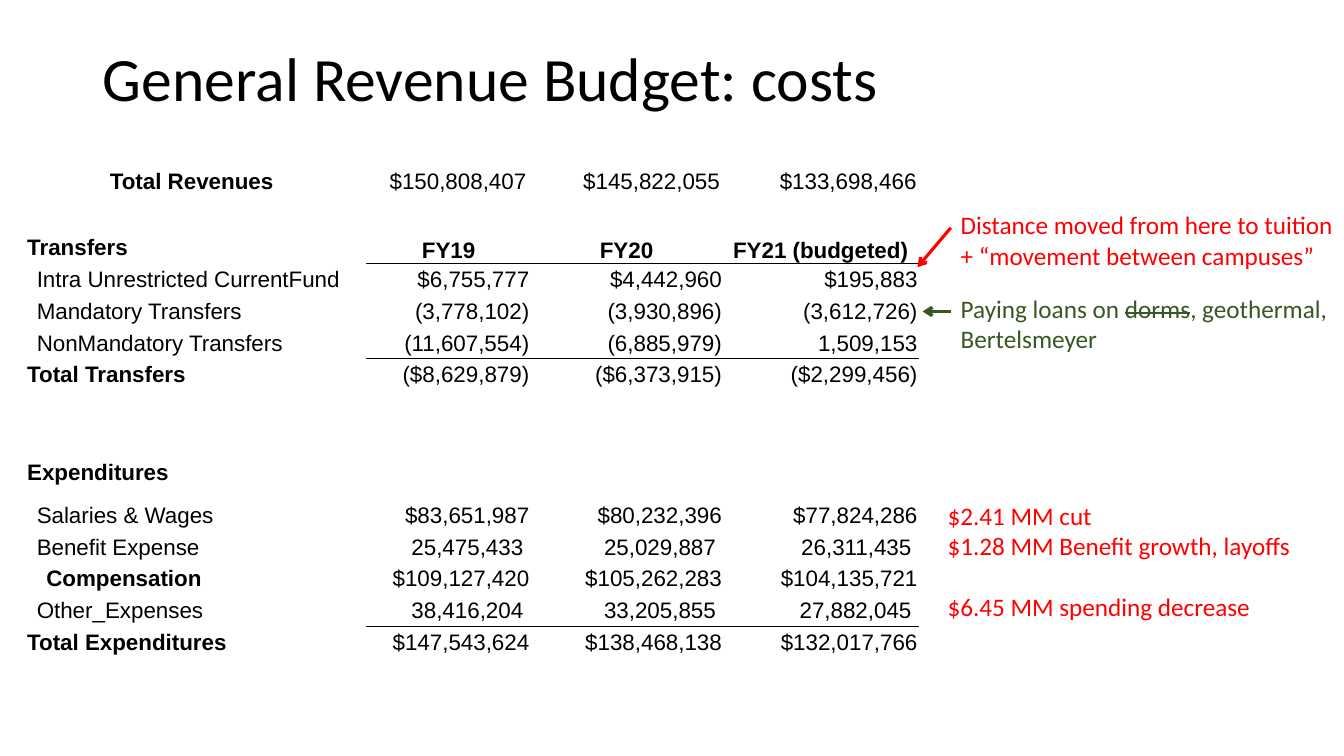
from lxml.etree import SubElement
from pptx import Presentation
from pptx.dml.color import RGBColor
from pptx.enum.shapes import MSO_CONNECTOR
from pptx.enum.text import MSO_ANCHOR, PP_ALIGN
from pptx.oxml.ns import qn
from pptx.util import Inches, Pt

# Content
TITLE = "General Revenue Budget: costs"
BLACK, WHITE, RED, GREEN = "000000", "FFFFFF", "FF0000", "385723"

# Rows: label, label indent level, bold label, values
REVENUES = [("Total Revenues", 0, True, ("$150,808,407", "$145,822,055", "$133,698,466"))]
NO_VALUES = ("", "", "")
COSTS = [
    ("Transfers", 0, True, ("FY19", "FY20", "FY21 (budgeted)")),
    ("Intra Unrestricted CurrentFund", 1, False, ("$6,755,777", "$4,442,960", "$195,883")),
    ("Mandatory Transfers", 1, False, ("(3,778,102)", "(3,930,896)", "(3,612,726)")),
    ("NonMandatory Transfers", 1, False, ("(11,607,554)", "(6,885,979)", "1,509,153")),
    ("Total Transfers", 0, True, ("($8,629,879)", "($6,373,915)", "($2,299,456)")),
    ("", 0, False, NO_VALUES),
    ("Expenditures", 0, True, NO_VALUES),
    ("Salaries & Wages", 1, False, ("$83,651,987", "$80,232,396", "$77,824,286")),
    ("Benefit Expense", 1, False, ("25,475,433", "25,029,887", "26,311,435")),
    ("Compensation", 2, True, ("$109,127,420", "$105,262,283", "$104,135,721")),
    ("Other_Expenses", 1, False, ("38,416,204", "33,205,855", "27,882,045")),
    ("Total Expenditures", 0, True, ("$147,543,624", "$138,468,138", "$132,017,766")),
    ("", 0, False, NO_VALUES),
    ("", 0, False, NO_VALUES),
]
HEADER_ROW = 0
RULED_ROWS = {0, 3, 10}    # a line runs under the values
INSET_ROWS = {8, 10}       # values stand slightly left of the others
TALL_ROWS = {5, 6}
COST_HEIGHTS = [0.54 if row in TALL_ROWS else 0.315 for row in range(len(COSTS))]

# Notes: left, top, width, height, colour, paragraphs of (text, struck out)
NOTES = [
    (9.43, 2.03, 3.9, 0.71, RED,
     [[("Distance moved from here to tuition + “movement between campuses”", False)]]),
    (9.43, 2.86, 4.12, 0.71, GREEN,
     [[("Paying loans on ", False), ("dorms", True), (", geothermal, Bertelsmeyer", False)]]),
    (9.3, 4.91, 3.64, 1.31, RED,
     [[("$2.41 MM cut", False)], [("$1.28 MM Benefit growth, layoffs", False)],
      [("$6.45 MM spending decrease", False)]]),
]
SPENDING_GAP = 22    # points above the third paragraph of a note

# Arrows: start, end, colour
ARROWS = [((9.43, 3.09), (9.15, 3.09), GREEN), ((9.43, 2.26), (9.1, 2.65), RED)]


def color(value):
    return RGBColor.from_string(value)


def apply(target, values):
    for name, value in values.items():
        setattr(target, name, value)


def write(para, text, size, font, ink, bold=False):
    span = para.add_run()
    span.text = text
    apply(span.font, {"size": Pt(size), "name": font, "bold": bold})
    span.font.color.rgb = color(ink)
    return span


def rule(cell, side):
    line = SubElement(cell._tc.get_or_add_tcPr(), qn(side), w=str(Pt(1)))
    SubElement(SubElement(line, qn("a:solidFill")), qn("a:srgbClr"), val=BLACK)


def fill_cell(cell, text, align, bold, left=0.01, right=0.01, anchor=MSO_ANCHOR.MIDDLE):
    apply(cell, {"margin_left": Inches(left), "margin_right": Inches(right),
                 "margin_top": Inches(0.01), "margin_bottom": 0, "vertical_anchor": anchor})
    cell.fill.solid()
    cell.fill.fore_color.rgb = color(WHITE)
    para = cell.text_frame.paragraphs[0]
    para.alignment = align
    if text:
        write(para, text, 16, "Arial", BLACK, bold)
    else:
        para._p.get_or_add_endParaRPr().set("sz", "1600")


def add_budget(page, rows, left, top, widths, heights, header=None, ruled=(), inset=()):
    frame = page.shapes.add_table(len(rows), len(widths), Inches(left), Inches(top),
                                  Inches(sum(widths)), Inches(sum(heights)))
    table = frame.table
    apply(table, {"first_row": False, "horz_banding": False})
    for column, width in zip(table.columns, widths):
        column.width = Inches(width)
    for index, (label, level, bold, values) in enumerate(rows):
        table.rows[index].height = Inches(heights[index])
        fill_cell(table.cell(index, 0), label, PP_ALIGN.LEFT, bold, left=0.01 + 0.095 * level)
        is_header = index == header
        for column, value in enumerate(values, 1):
            cell = table.cell(index, column)
            if index - 1 in ruled:
                rule(cell, "a:lnT")
            if index in ruled:
                rule(cell, "a:lnB")
            fill_cell(cell, value, PP_ALIGN.CENTER if is_header else PP_ALIGN.RIGHT, is_header,
                      right=0.07 if index in inset else 0.01,
                      anchor=MSO_ANCHOR.BOTTOM if is_header else MSO_ANCHOR.MIDDLE)


def add_note(page, left, top, width, height, ink, paragraphs):
    box = page.shapes.add_textbox(Inches(left), Inches(top), Inches(width), Inches(height))
    box.text_frame.word_wrap = True
    for index, pieces in enumerate(paragraphs):
        para = box.text_frame.paragraphs[0] if index == 0 else box.text_frame.add_paragraph()
        if index == 2:
            para.space_before = Pt(SPENDING_GAP)
        for text, struck in pieces:
            span = write(para, text, 18, "Calibri", ink)
            if struck:
                span._r.get_or_add_rPr().set("strike", "sngStrike")


def add_arrow(page, start, end, ink):
    arrow = page.shapes.add_connector(MSO_CONNECTOR.STRAIGHT,
                                      *(Inches(value) for value in start + end))
    arrow.line.width = Pt(2.25)
    arrow.line.color.rgb = color(ink)
    SubElement(arrow.line._get_or_add_ln(), qn("a:tailEnd"), type="arrow")
    SubElement(arrow._element.spPr, qn("a:effectLst"))


def main():
    deck = Presentation()
    apply(deck, {"slide_width": Inches(13.33), "slide_height": Inches(7.5)})
    page = deck.slides.add_slide(deck.slide_layouts[5])

    # Title
    title = page.shapes.title
    apply(title, {"left": Inches(0.92), "top": Inches(0.08),
                  "width": Inches(11.5), "height": Inches(1.45)})
    title.text_frame.vertical_anchor = MSO_ANCHOR.MIDDLE
    para = title.text_frame.paragraphs[0]
    apply(para, {"alignment": PP_ALIGN.LEFT, "line_spacing": 0.9})
    write(para, TITLE, 44, "Calibri", BLACK)

    # Budget tables
    add_budget(page, COSTS, 0.26, 2.3, (3.38, 1.62, 1.91, 1.94), COST_HEIGHTS,
               HEADER_ROW, RULED_ROWS, INSET_ROWS)
    add_budget(page, REVENUES, 1.08, 1.63, (2.64, 1.51, 1.92, 1.95), [0.34])

    # Notes and their arrows
    for note in NOTES:
        add_note(page, *note)
    for arrow in ARROWS:
        add_arrow(page, *arrow)

    deck.save("out.pptx")


if __name__ == "__main__":
    main()
